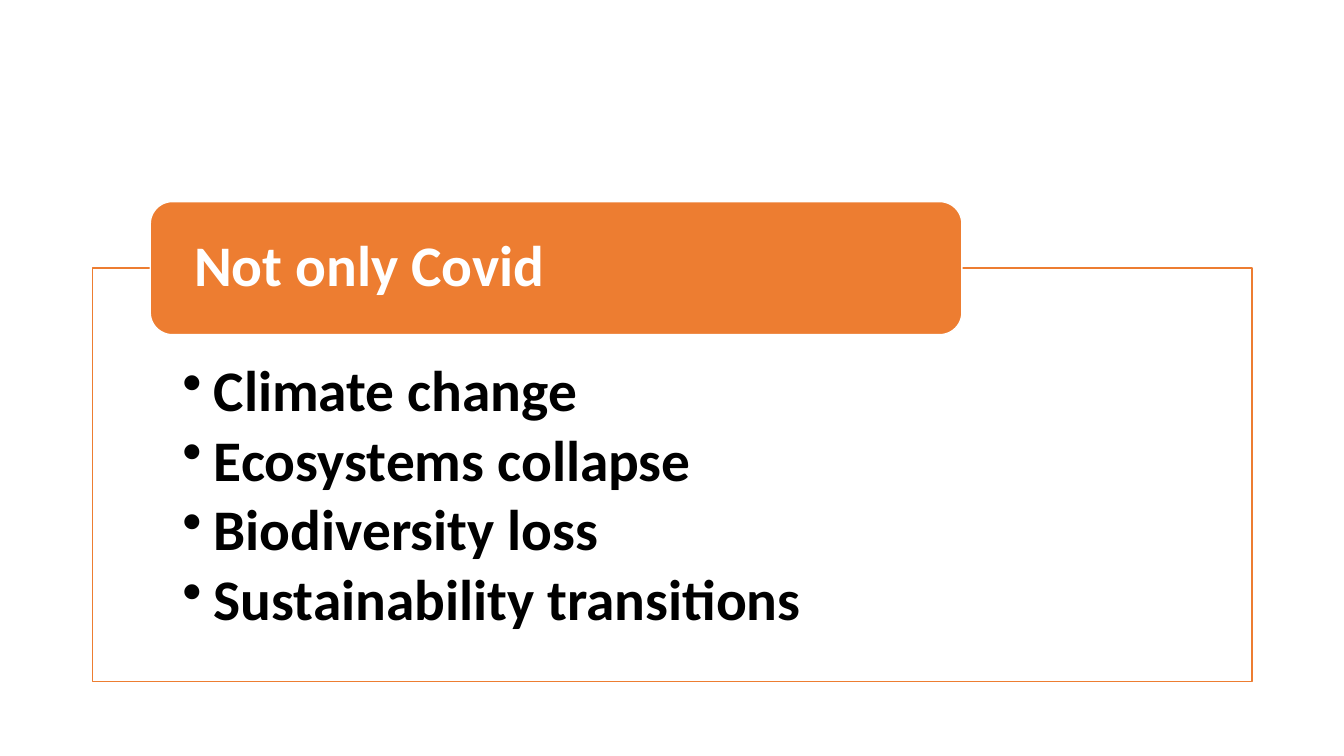
"""Build a slide with a titled frame around a bulleted list."""
from dataclasses import dataclass

from lxml.etree import SubElement
from pptx import Presentation
from pptx.dml.color import RGBColor
from pptx.enum.shapes import MSO_SHAPE as Kind
from pptx.enum.text import MSO_ANCHOR as Anchor, PP_ALIGN as Align
from pptx.oxml.ns import qn
from pptx.slide import Slide
from pptx.util import Inches, Pt

ORANGE, WHITE, BLACK = "ED7D31", "FFFFFF", "000000"
SIZE = 41
HANG = 0.31


@dataclass
class Box:
    kind: Kind
    area: tuple[float, float, float, float]
    fill: str
    line: str
    ink: str
    pads: tuple[float, float, float, float]
    anchor: Anchor
    lines: list[str]
    alpha: int = 100
    bullet: str = ""
    after: float = 0


BOXES = [
    Box(Kind.RECTANGLE, (0.92, 2.66, 11.5, 4.1), WHITE, ORANGE, BLACK,
        (0.89, 0.93, 0.89, 0.32), Anchor.TOP,
        ["Climate change", "Ecosystems collapse", "Biodiversity loss",
         "Sustainability transitions"], alpha=90, bullet="•", after=5.5),
    Box(Kind.ROUNDED_RECTANGLE, (1.49, 2, 8.05, 1.32), ORANGE, WHITE, WHITE,
        (0.37, 0, 0.37, 0), Anchor.MIDDLE, ["Not only Covid"]),
]


def paint(part, code: str) -> None:
    part.solid()
    part.fore_color.rgb = RGBColor.from_string(code)


def draw(slide: Slide, box: Box) -> None:
    shape = slide.shapes.add_shape(box.kind, *map(Inches, box.area))
    shape.shadow.inherit = False
    paint(shape.fill, box.fill)
    if box.alpha < 100:
        color = shape.fill._xPr.find(f".//{qn('a:srgbClr')}")
        SubElement(color, qn("a:alpha"), val=str(box.alpha * 1000))
    paint(shape.line.fill, box.line)
    shape.line.width = Pt(1)
    write(shape.text_frame, box)


def write(frame, box: Box) -> None:
    frame.word_wrap = True
    frame.vertical_anchor = box.anchor
    (frame.margin_left, frame.margin_top,
     frame.margin_right, frame.margin_bottom) = map(Inches, box.pads)
    for i, line in enumerate(box.lines):
        para = frame.add_paragraph() if i else frame.paragraphs[0]
        para.alignment = Align.LEFT
        para.line_spacing = 0.9
        para.space_after = Pt(box.after)
        if box.bullet:
            para.level = 1
            props = para._p.get_or_add_pPr()
            props.set("marL", str(Inches(HANG)))
            props.set("indent", str(-Inches(HANG)))
            SubElement(props, qn("a:buChar"), char=box.bullet)
        run = para.add_run()
        run.text = line
        font = run.font
        font.name, font.size, font.bold = "Calibri", Pt(SIZE), True
        paint(font.fill, box.ink)


def main() -> None:
    deck = Presentation()
    deck.slide_width, deck.slide_height = Inches(13.33), Inches(7.5)
    slide = deck.slides.add_slide(deck.slide_layouts[6])
    for box in BOXES:
        draw(slide, box)
    deck.save("out.pptx")


if __name__ == "__main__":
    main()
